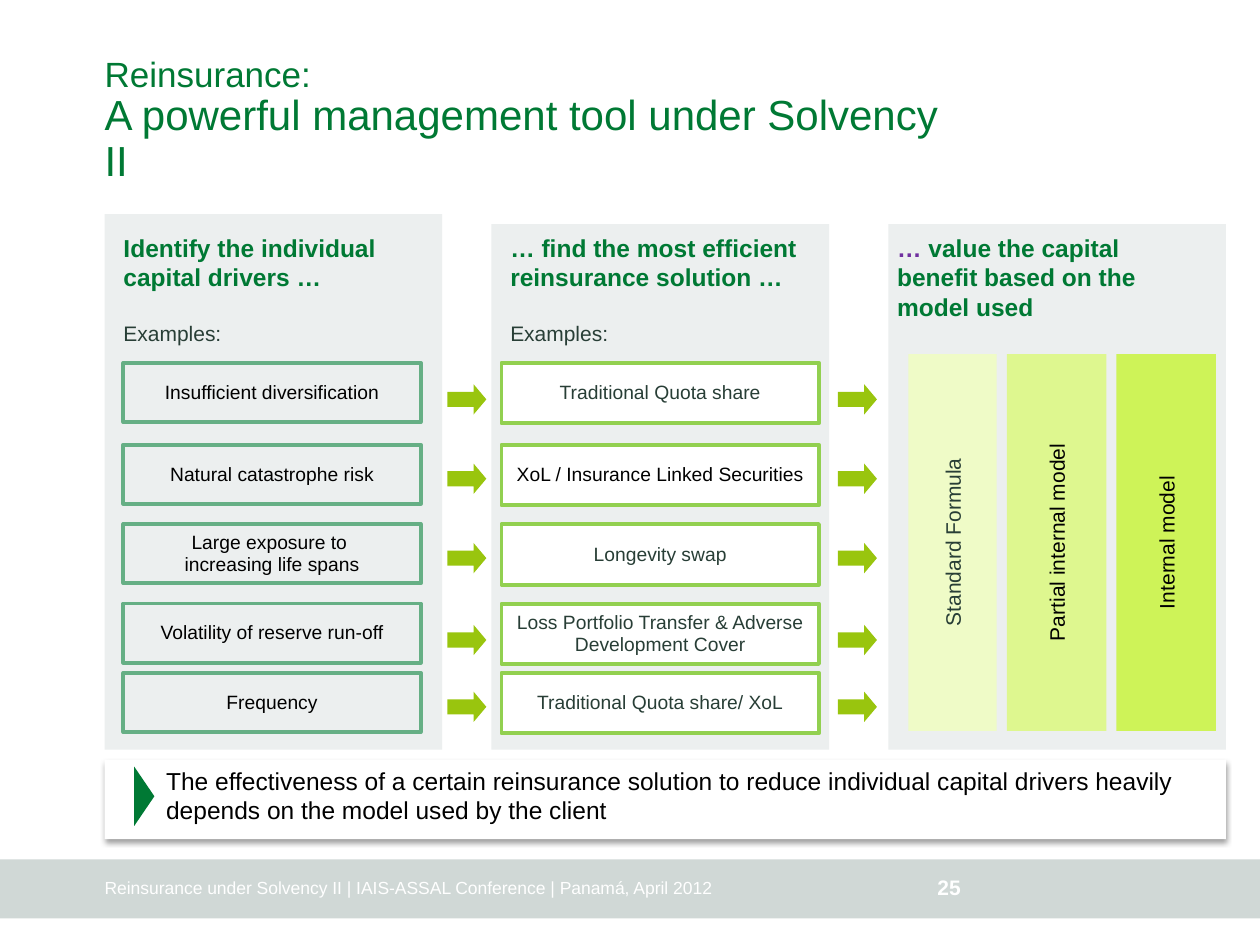
from lxml.etree import SubElement
from pptx import Presentation
from pptx.dml.color import RGBColor
from pptx.enum.shapes import MSO_SHAPE
from pptx.enum.text import MSO_ANCHOR, PP_ALIGN
from pptx.oxml.ns import qn
from pptx.util import Inches, Pt

GREEN, DARK, BLACK, WHITE = "007934", "283E36", "000000", "FFFFFF"
PANEL, BAND, LIME, PURPLE = "ECEFEF", "D0D8D6", "99C50E", "7030A0"

TITLE = [("Reinsurance:\v", 20), ("A powerful management tool under Solvency II", 24)]
FOOTER = "Reinsurance under Solvency II | IAIS-ASSAL Conference | Panamá, April 2012"
PAGE = "25"
CLAIM = ("The effectiveness of a certain reinsurance solution to reduce individual "
         "capital drivers heavily depends on the model used by the client")
PANELS = [(0.83, 1.7), (3.9, 1.78), (7.05, 1.78)]
HEADS = [
    (0.91, 2.52, [("Identify the individual capital drivers …", GREEN)], "Examples:"),
    (3.98, 2.44, [("… find the most efficient reinsurance solution …", GREEN)], "Examples:"),
    (7.05, 2.44, [("… ", PURPLE),
                  ("value the capital benefit based on the model used", GREEN)], None),
]
ROWS = [
    (2.88, 3.05, "Insufficient diversification", "Traditional Quota share", DARK),
    (3.53, 3.68, "Natural catastrophe risk", "XoL / Insurance Linked Securities", BLACK),
    (4.16, 4.31, "Large exposure to \vincreasing life spans", "Longevity swap", DARK),
    (4.79, 4.96, "Volatility of reserve run-off",
     "Loss Portfolio Transfer & Adverse Development Cover", DARK),
    (5.34, 5.49, "Frequency", "Traditional Quota share/ XoL", DARK),
]
MODELS = [
    (7.21, 0.7, "EFFBC7", "Standard Formula", DARK),
    (7.99, 0.79, "DEF78F", "Partial internal model", BLACK),
    (8.86, 0.79, "CEF358", "Internal model", BLACK),
]


def rgb(code):
    return RGBColor.from_string(code)


def style(font, size, color, bold=False):
    font.name, font.size, font.bold = "Arial", Pt(size), bold
    font.color.rgb = rgb(color)


def frame(shape, inset=0, anchor=MSO_ANCHOR.MIDDLE, wrap=True):
    text = shape.text_frame
    text.word_wrap, text.vertical_anchor = wrap, anchor
    text.margin_left = text.margin_right = Inches(inset)
    text.margin_top = text.margin_bottom = Inches(inset)
    return text


def draw(slide, box, fill=None, line=None, kind=MSO_SHAPE.RECTANGLE):
    shape = slide.shapes.add_shape(kind, *map(Inches, box))
    shape.shadow.inherit = False
    if fill:
        shape.fill.solid()
        shape.fill.fore_color.rgb = rgb(fill)
    else:
        shape.fill.background()
    if line:
        shape.line.color.rgb = rgb(line)
        shape.line.width = Pt(2.25)
    else:
        shape.line.fill.background()
    return shape


def write(shape, words, size, color, inset=0, spacing=None):
    para = frame(shape, inset).paragraphs[0]
    para.text, para.alignment, para.line_spacing = words, PP_ALIGN.CENTER, spacing
    style(para.font, size, color)


def label(slide, box, words, size, bold=False):
    text = frame(slide.shapes.add_textbox(*map(Inches, box)), 0, MSO_ANCHOR.BOTTOM, False)
    text.text = words
    style(text.paragraphs[0].font, size, WHITE, bold)


def title(slide):
    box = slide.shapes.add_textbox(*map(Inches, (0.83, 0.52, 6.69, 0.95)))
    para = frame(box, 0, MSO_ANCHOR.BOTTOM).paragraphs[0]
    para.line_spacing = 0.9
    for words, size in TITLE:
        para.add_run().text = words.rstrip("\v")
        style(para.runs[-1].font, size, GREEN)
        if words.endswith("\v"):
            para.add_line_break()


def head(slide, left, width, parts, note):
    box = slide.shapes.add_textbox(*map(Inches, (left, 1.78, width, 3.54)))
    text = frame(box, 0.07, MSO_ANCHOR.TOP)
    para = text.paragraphs[0]
    for words, color in parts:
        run = para.add_run()
        run.text = words
        style(run.font, 14, color, True)
    if note:
        para = text.add_paragraph()
        para.text, para.space_before = note, Pt(16.5)
        style(para.font, 12, DARK)


def claim(slide):
    bar = draw(slide, (0.83, 6.03, 8.9, 0.63), WHITE)
    effects = bar.shadow._element.find(qn("a:effectLst"))
    shade = SubElement(effects, qn("a:outerShdw"), blurRad=str(Pt(3.1)),
                       dist=str(Pt(1.6)), dir="5400000", algn="t", rotWithShape="0")
    tone = SubElement(shade, qn("a:srgbClr"), val=BLACK)
    SubElement(tone, qn("a:alpha"), val="38000")
    text = frame(bar, 0.05, MSO_ANCHOR.TOP)
    text.margin_left = text.margin_right = Inches(0.1)
    para = text.paragraphs[0]
    para.text, para.alignment = CLAIM, PP_ALIGN.LEFT
    para._p.get_or_add_pPr().set("marL", str(Inches(0.39)))
    style(para.font, 14, BLACK)
    mark = draw(slide, (0.91, 6.24, 0.47, 0.16), GREEN, kind=MSO_SHAPE.ISOSCELES_TRIANGLE)
    mark.rotation = 90


def main():
    """Build the reinsurance slide and save it."""
    deck = Presentation()
    deck.slide_width, deck.slide_height = Inches(10), Inches(7.5)
    slide = deck.slides.add_slide(deck.slide_layouts[6])
    draw(slide, (0, 6.82, 10, 0.47), BAND)
    label(slide, (0.83, 6.98, 6.46, 0.15), FOOTER, 10)
    label(slide, (7.44, 6.94, 0.2, 0.2), PAGE, 12, True)
    title(slide)
    for left, top in PANELS:
        draw(slide, (left, top, 2.68, 5.95 - top), PANEL)
    for item in HEADS:
        head(slide, *item)
    for top, tip, cause, cure, color in ROWS:
        write(draw(slide, (0.98, top, 2.36, 0.47), None, "66AF85"),
              cause, 11, BLACK, spacing=0.96)
        write(draw(slide, (3.98, top, 2.52, 0.48), WHITE, "92D050"),
              cure, 11, color, spacing=0.96)
        for left in (3.55, 6.65):
            arrow = draw(slide, (left, tip, 0.31, 0.24), LIME, kind=MSO_SHAPE.RIGHT_ARROW)
            arrow.adjustments[1] = 0.42
    for left, width, fill, words, color in MODELS:
        bar = draw(slide, (left, 2.81, width, 2.99), fill)
        write(bar, words, 12, color, 0.07)
        bar.text_frame._txBody.bodyPr.set("vert", "vert270")
    claim(slide)
    deck.save("out.pptx")


if __name__ == "__main__":
    main()
